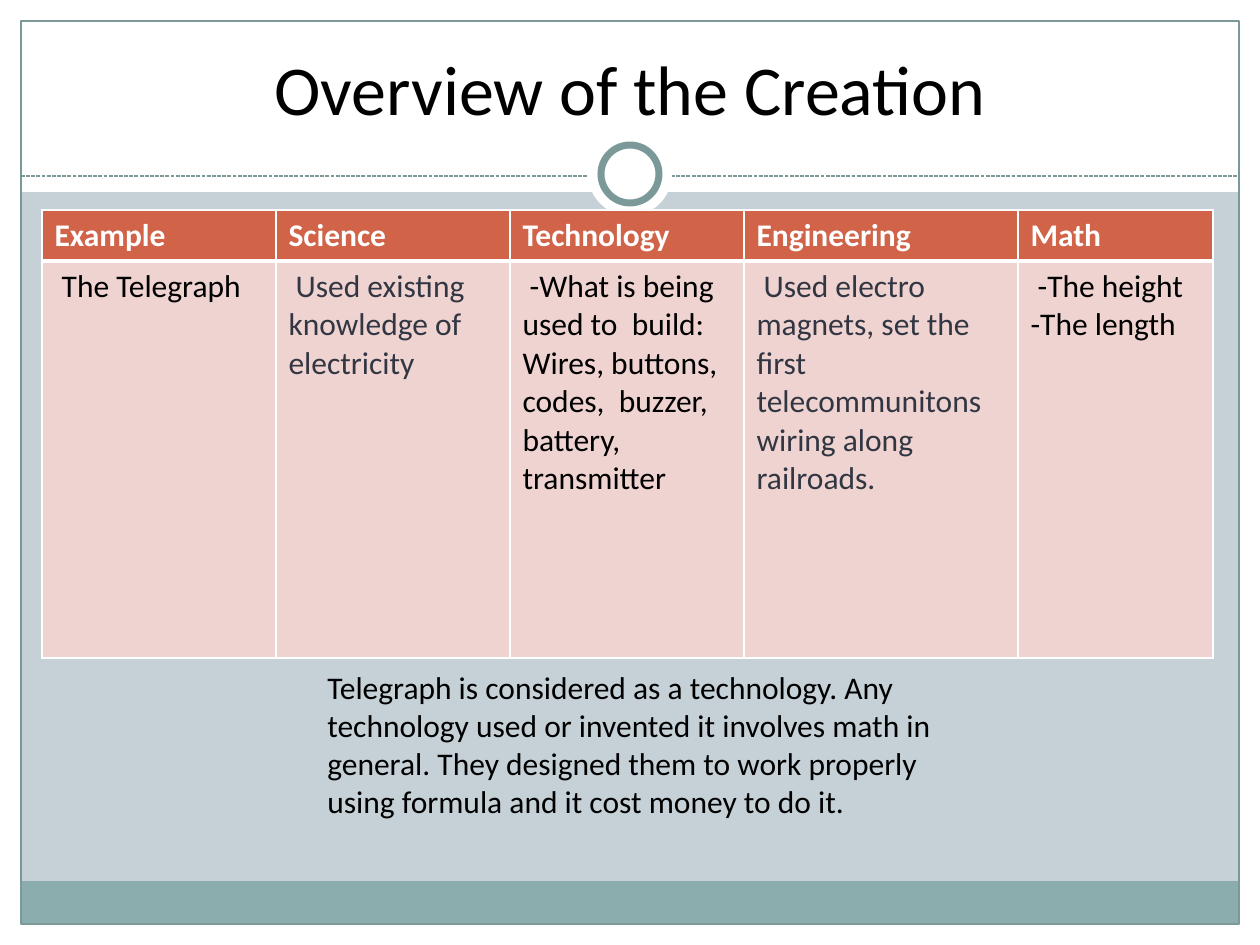
from lxml.etree import SubElement
from pptx import Presentation
from pptx.dml.color import RGBColor
from pptx.enum.dml import MSO_LINE
from pptx.enum.shapes import MSO_CONNECTOR as Connector, MSO_SHAPE as Shape
from pptx.enum.text import MSO_ANCHOR as Anchor, PP_ALIGN as Align
from pptx.oxml.ns import qn
from pptx.util import Pt

SCALE = 914400 / 126
WIDTH, HEIGHT, MARGIN = 1260, 945, 21
WHITE, BLACK, SLATE = "FFFFFF", "000000", "323643"
TEAL, FOOTER, BACKGROUND = "7C999A", "8CADAE", "C5D1D7"
HEADER, BODY = "D16349", "EED3D0"


def px(length):
    return round(length * SCALE)


def color(value):
    return RGBColor.from_string(value)


def write(frame, text, size=18, ink=BLACK, bold=False, align=Align.LEFT):
    for index, line in enumerate(text.split("\n")):
        paragraph = frame.paragraphs[0] if index == 0 else frame.add_paragraph()
        paragraph.alignment = align
        run = paragraph.add_run()
        run.text = line
        run.font.name = "Calibri"
        run.font.size = Pt(size)
        run.font.bold = bold
        run.font.color.rgb = color(ink)


def add_border(cell, side, width):
    properties = cell._tc.get_or_add_tcPr()
    edge = SubElement(properties, qn(f"a:ln{side}"), w=str(Pt(width)))
    fill = SubElement(edge, qn("a:solidFill"))
    SubElement(fill, qn("a:srgbClr"), val=WHITE)


class SlideBuilder:
    def __init__(self, slide):
        self.slide = slide
        self.shapes = slide.shapes

    def background(self, fill):
        self.slide.background.fill.solid()
        self.slide.background.fill.fore_color.rgb = color(fill)

    def shape(self, kind, box, fill=None, line=None, weight=0.75):
        shape = self.shapes.add_shape(kind, *map(px, box))
        shape.shadow.inherit = False
        if fill:
            shape.fill.solid()
            shape.fill.fore_color.rgb = color(fill)
        else:
            shape.fill.background()
        if line:
            shape.line.color.rgb = color(line)
            shape.line.width = Pt(weight)
        else:
            shape.line.fill.background()

    def circle(self, center, diameter, **style):
        x, y = center
        box = (x - diameter / 2, y - diameter / 2, diameter, diameter)
        self.shape(Shape.OVAL, box, WHITE, **style)

    def dashed_line(self, start, end, ink):
        rule = self.shapes.add_connector(Connector.STRAIGHT, *map(px, start + end))
        rule.line.color.rgb = color(ink)
        rule.line.width = Pt(0.75)
        rule.line.dash_style = MSO_LINE.SQUARE_DOT
        SubElement(rule._element.spPr, qn("a:effectLst"))

    def text(self, box, text, anchor=Anchor.TOP, **style):
        frame = self.shapes.add_textbox(*map(px, box)).text_frame
        frame.word_wrap = True
        frame.vertical_anchor = anchor
        write(frame, text, **style)

    def table(self, origin, widths, heights, rows, inks):
        size = (sum(widths), sum(heights))
        frame = self.shapes.add_table(len(rows), len(widths), *map(px, origin + size))
        table = frame.table
        for column, width in zip(table.columns, widths):
            column.width = px(width)
        for r, (texts, height) in enumerate(zip(rows, heights)):
            table.rows[r].height = px(height)
            for c, text in enumerate(texts):
                cell = table.cell(r, c)
                is_header = r == 0
                for side in "LRTB":
                    divider = side == ("B" if is_header else "T")
                    add_border(cell, side, 3 if divider else 1)
                cell.fill.solid()
                cell.fill.fore_color.rgb = color(HEADER if is_header else BODY)
                ink = WHITE if is_header else inks[c]
                write(cell.text_frame, text, ink=ink, bold=is_header)


def main():
    deck = Presentation()
    deck.slide_width, deck.slide_height = px(WIDTH), px(HEIGHT)
    page = SlideBuilder(deck.slides.add_slide(deck.slide_layouts[6]))
    page.background(BACKGROUND)

    inner = WIDTH - 2 * MARGIN
    for band in [
        (0, HEIGHT - MARGIN, WIDTH, MARGIN),
        (0, 0, WIDTH, 192),
        (0, 0, MARGIN, HEIGHT),
        (WIDTH - MARGIN, 0, MARGIN, HEIGHT),
    ]:
        page.shape(Shape.RECTANGLE, band, WHITE)
    page.shape(Shape.RECTANGLE, (MARGIN, 881, inner, 43), FOOTER)
    page.shape(Shape.RECTANGLE, (MARGIN, MARGIN, inner, HEIGHT - 2 * MARGIN), line=TEAL)
    page.dashed_line((MARGIN, 176), (WIDTH - MARGIN, 176), TEAL)
    ring_center = (WIDTH // 2, 174)
    page.circle(ring_center, 84)
    page.circle(ring_center, 58, line=TEAL, weight=4)

    page.text((42, 31, 1176, 105), "Overview of the Creation",
              anchor=Anchor.BOTTOM, size=40, align=Align.CENTER)
    page.table(
        origin=(42, 210),
        widths=[234, 234, 234, 274, 195],
        heights=[51, 397],
        rows=[
            ["Example", "Science", "Technology", "Engineering", "Math"],
            [
                " The Telegraph",
                " Used existing knowledge of electricity",
                " -What is being used to  build: Wires, buttons, codes,  "
                "buzzer, battery, transmitter",
                " Used electro magnets, set the first telecommunitons "
                "wiring along railroads.",
                " -The height\n-The length",
            ],
        ],
        inks=[BLACK, SLATE, BLACK, SLATE, BLACK],
    )
    page.text((315, 662, 630, 204),
              "Telegraph is considered as a technology. Any technology used or "
              "invented it involves math in general. They designed them to work "
              "properly using formula and it cost money to do it.")
    deck.save("out.pptx")


if __name__ == "__main__":
    main()
